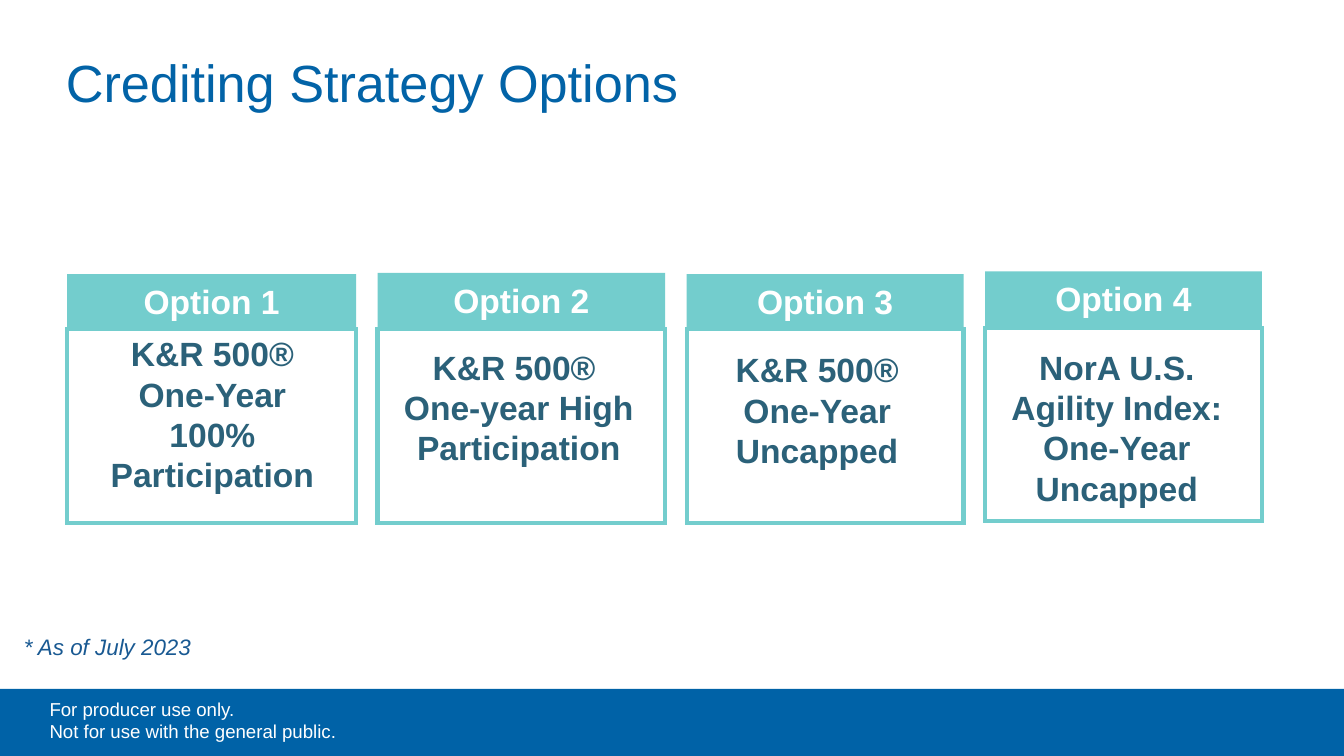
from lxml.etree import SubElement
from pptx import Presentation
from pptx.dml.color import RGBColor
from pptx.enum.shapes import MSO_SHAPE
from pptx.enum.text import MSO_ANCHOR, PP_ALIGN
from pptx.oxml.ns import qn
from pptx.util import Inches, Pt

BLUE = RGBColor(0x00, 0x62, 0xA7)
TITLE_BLUE = RGBColor(0x02, 0x63, 0xA7)
NOTE_BLUE = RGBColor(0x19, 0x59, 0x92)
TEAL = RGBColor(0x73, 0xCD, 0xCD)
SLATE = RGBColor(0x2B, 0x61, 0x79)
WHITE = RGBColor(0xFF, 0xFF, 0xFF)

prs = Presentation()
prs.slide_width = Inches(10)
prs.slide_height = prs.slide_width * 9 // 16
slide = prs.slides.add_slide(prs.slide_layouts[5])


def add_panel(left, top, width, height, fill, outline=None):
    panel = slide.shapes.add_shape(MSO_SHAPE.RECTANGLE, left, top, width, height)
    panel.shadow.inherit = False
    panel.fill.solid()
    panel.fill.fore_color.rgb = fill
    if outline is None:
        panel.line.fill.background()
    else:
        panel.line.color.rgb = outline
        panel.line.width = Pt(2.25)
        SubElement(panel.line._get_or_add_ln(), qn("a:miter"), lim="800000")
    return panel


def write(holder, text, size, color, align=PP_ALIGN.LEFT, bold=False, italic=False):
    frame = holder.text_frame
    frame.word_wrap = True
    frame.vertical_anchor = MSO_ANCHOR.TOP
    frame.text = text
    for paragraph in frame.paragraphs:
        paragraph.alignment = align
        font = paragraph.font
        font.name, font.size = "Arial", Pt(size)
        font.bold, font.italic = bold, italic
        font.color.rgb = color


footer_height = Inches(0.5)
footer_top = prs.slide_height - footer_height
add_panel(0, footer_top, prs.slide_width, footer_height, BLUE)

title = slide.shapes.title
title.left, title.top, title.width, title.height = map(Inches, (0.39, 0.32, 9.04, 0.63))
write(title, "Crediting Strategy Options", 28, TITLE_BLUE)
title.text_frame.vertical_anchor = MSO_ANCHOR.MIDDLE
title.text_frame.paragraphs[0].line_spacing = 0.9

as_of_note = slide.shapes.add_textbox(Inches(0.08), Inches(4.66), Inches(9.83), Inches(0.3))
write(as_of_note, "* As of July 2023", 12, NOTE_BLUE, italic=True)

header_height, body_height = Inches(0.41), Inches(1.44)
options = [
    (0.5, 2.04, 2.45, 2.15, (0.67, 2.43, 1.82, 1.31),
     "K&R 500® One-Year 100% Participation"),
    (2.81, 2.03, 2.45, 2.14, (2.89, 2.53, 1.94, 1.31),
     "K&R 500® \vOne-year High Participation"),
    (5.11, 2.04, 2.45, 2.06, (5.14, 2.55, 1.88, 1.01),
     "K&R 500®\nOne-Year Uncapped"),
    (7.33, 2.02, 2.44, 2.06, (7.34, 2.53, 1.94, 1.62),
     "NorA U.S. Agility Index: One-Year Uncapped"),
]
for number, (left, header_top, body_top, width, text_area, strategy) in enumerate(options, 1):
    left, width = Inches(left), Inches(width)
    add_panel(left, Inches(body_top), width, body_height, WHITE, TEAL)
    header = add_panel(left, Inches(header_top), width, header_height, TEAL)
    write(header, f"Option {number}", 18, WHITE, PP_ALIGN.CENTER, bold=True)
    strategy_text = slide.shapes.add_textbox(*map(Inches, text_area))
    write(strategy_text, strategy, 18, SLATE, PP_ALIGN.CENTER, bold=True)

disclaimer = slide.shapes.add_textbox(Inches(0.27), Inches(5.14), Inches(3.58), Inches(0.44))
write(disclaimer, "For producer use only.\vNot for use with the general public.", 10, WHITE)

prs.save("out.pptx")
